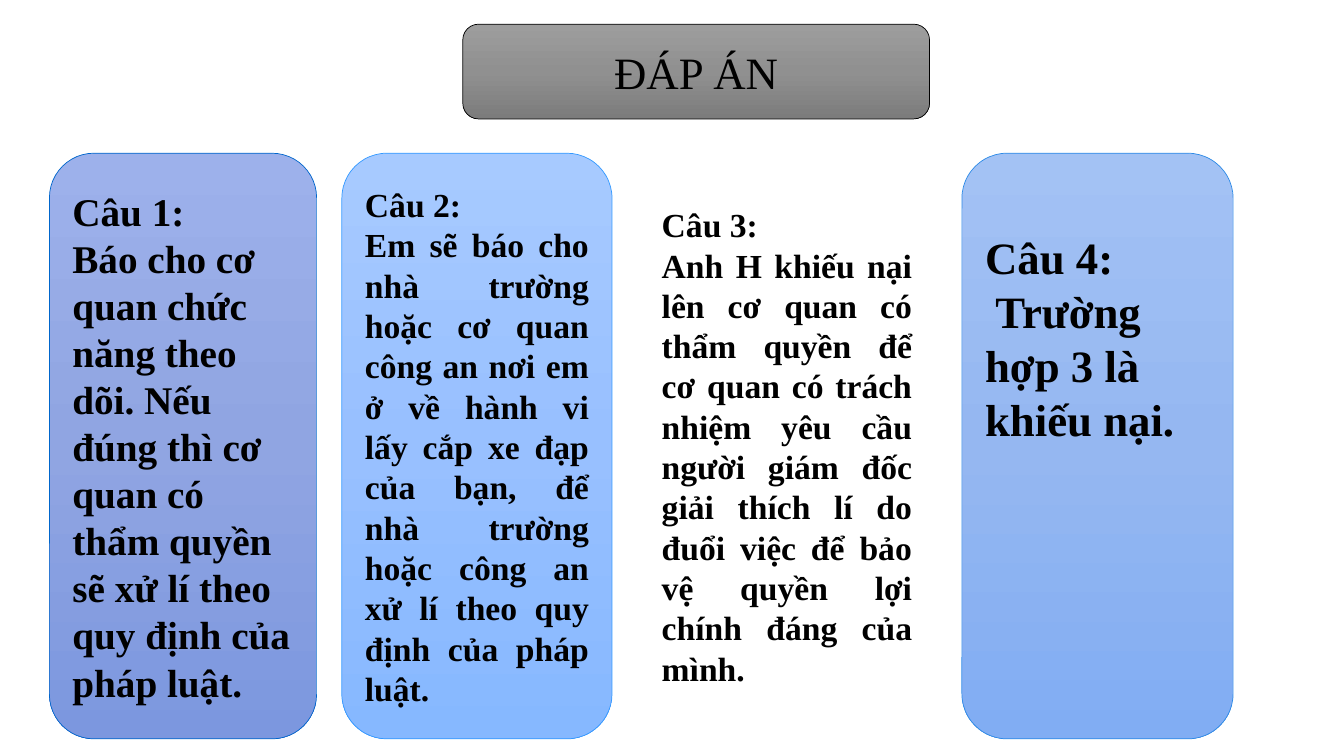
import copy

import pptx
import pptx.dml.color
import pptx.enum.shapes
import pptx.enum.text
import pptx.util

Inches = pptx.util.Inches
Pt = pptx.util.Pt
ALIGN = pptx.enum.text.PP_ALIGN
ANCHOR = pptx.enum.text.MSO_ANCHOR

FONT = "Times New Roman"
CARD_LEFT, CARD_TOP, CARD_HEIGHT, CARD_GAP = 0.49, 1.52, 5.81, 0.25

# Width, fill colours, line, text size, alignment, heading, answer
CARDS = [
    (2.65, ["9DB1EB", "90A5E2", "7C97DF"], "0066CC", 28, ALIGN.LEFT, "Câu 1:",
     "Báo cho cơ quan chức năng theo dõi. Nếu đúng thì cơ quan có thẩm quyền "
     "sẽ xử lí theo quy định của pháp luật."),
    (2.68, ["A7CAFF", "98C0FF", "86B8FF"], "3399FF", 24, ALIGN.JUSTIFY, "Câu 2:",
     "Em sẽ báo cho nhà trường hoặc cơ quan công an nơi em ở về hành vi lấy cắp "
     "xe đạp của bạn, để nhà trường hoặc công an xử lí theo quy định của pháp luật."),
    (2.97, ["FFFFFF"], "FFFFFF", 24, ALIGN.JUSTIFY, "Câu 3:",
     "Anh H khiếu nại lên cơ quan có thẩm quyền để cơ quan có trách nhiệm yêu cầu "
     "người giám đốc giải thích lí do đuổi việc để bảo vệ quyền lợi chính đáng của mình."),
    (2.69, ["A3C2F4", "95B7F1", "81ADF3"], "2D8AE7", 32, ALIGN.LEFT, "Câu 4:",
     " Trường hợp 3 là khiếu nại."),
]


def rgb(value):
    return pptx.dml.color.RGBColor.from_string(value)


def paint(s, colors):
    """Fill with one colour, or with three from top to bottom."""
    if len(colors) == 1:
        s.fill.solid()
        s.fill.fore_color.rgb = rgb(colors[0])
        return
    s.fill.gradient()
    s.fill.gradient_angle = 270
    first = s._element.spPr.find(".//" + pptx.oxml.ns.qn("a:gs"))
    first.addnext(copy.deepcopy(first))
    for i, (stop, color) in enumerate(zip(s.fill.gradient_stops, colors)):
        stop.position = i / 2
        stop.color.rgb = rgb(color)


def add_panel(slide, box, colors, line, lines, size, align, bold):
    """Rounded panel with one paragraph per line of text."""
    s = slide.shapes.add_shape(pptx.enum.shapes.MSO_SHAPE.ROUNDED_RECTANGLE,
                               *[Inches(v) for v in box])
    s.shadow.inherit = False
    paint(s, colors)
    s.line.color.rgb = rgb(line)
    s.line.width = Pt(0.5)
    tf = s.text_frame
    tf.word_wrap = True
    tf.vertical_anchor = ANCHOR.MIDDLE
    for i, text in enumerate(lines):
        p = tf.paragraphs[0] if i == 0 else tf.add_paragraph()
        p.alignment = align
        r = p.add_run()
        r.text = text
        r.font.name = FONT
        r.font.size = Pt(size)
        r.font.bold = bold
        r.font.color.rgb = rgb("000000")
    return s


def add_title(slide, box):
    add_panel(slide, box, ["9D9D9D", "909090", "7C7C7C"], "000000",
              ["ĐÁP ÁN"], 32, ALIGN.CENTER, False)


def add_cards(slide, left, top, height):
    for width, colors, line, size, align, heading, answer in CARDS:
        s = add_panel(slide, (left, top, width, height), colors, line,
                      [heading, answer], size, align, True)
        left += width + CARD_GAP
    # The short last answer starts near the top of its card
    s.text_frame.vertical_anchor = ANCHOR.TOP
    s.text_frame.margin_top = Inches(0.63)


def main():
    prs = pptx.Presentation()
    prs.slide_width, prs.slide_height = Inches(13.33), Inches(7.5)
    slide = prs.slides.add_slide(prs.slide_layouts[6])
    add_title(slide, (4.59, 0.24, 4.63, 0.94))
    add_cards(slide, CARD_LEFT, CARD_TOP, CARD_HEIGHT)
    prs.save("out.pptx")


if __name__ == "__main__":
    main()
